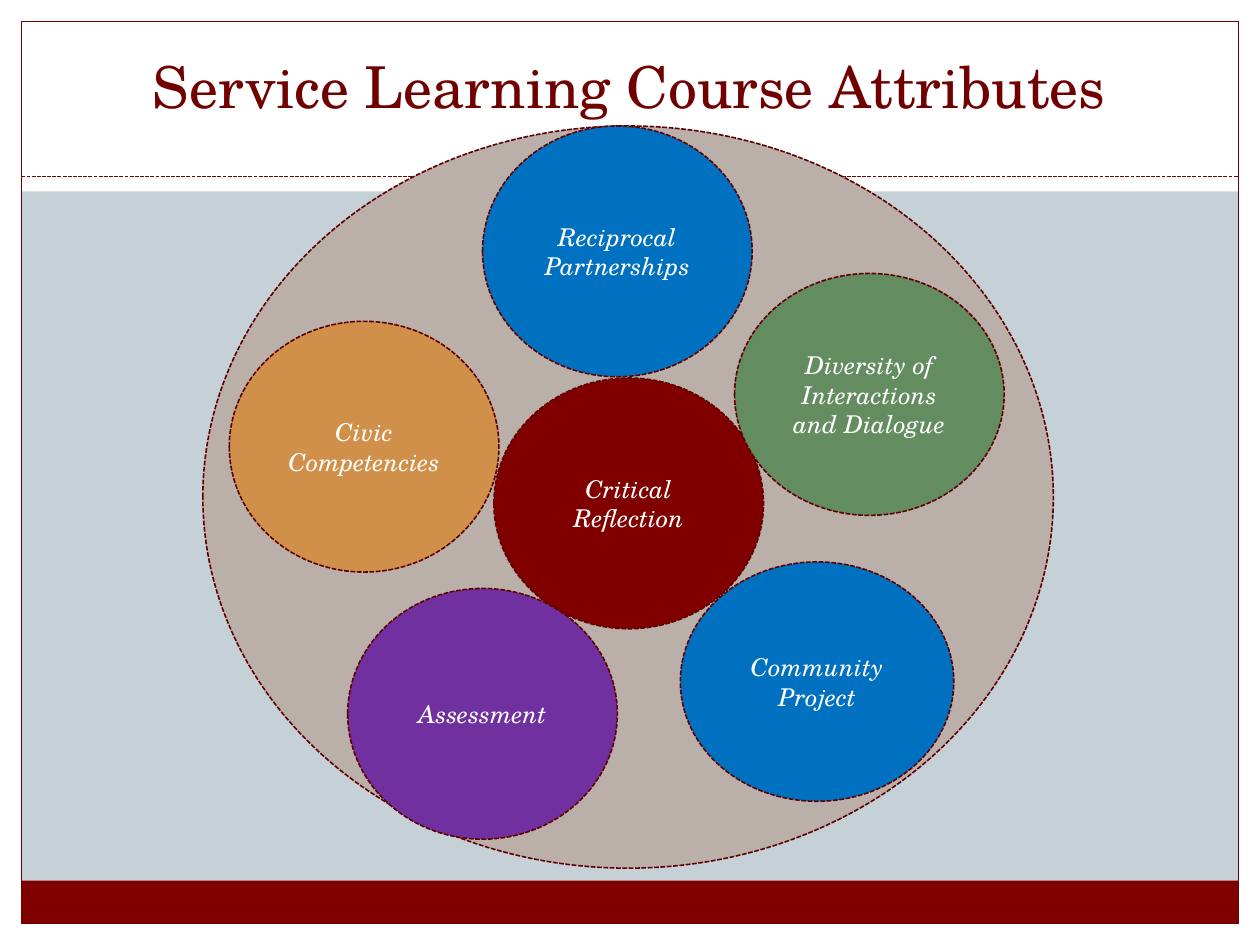
"""Build the slide on the attributes of a service learning course."""
from pptx import Presentation
from pptx.dml.color import RGBColor
from pptx.enum.dml import MSO_LINE
from pptx.enum.shapes import MSO_CONNECTOR, MSO_SHAPE
from pptx.enum.text import MSO_ANCHOR, PP_ALIGN
from pptx.oxml.ns import qn
from pptx.util import Inches, Pt

RECT, OVAL = MSO_SHAPE.RECTANGLE, MSO_SHAPE.OVAL
DASH, STRAIGHT = MSO_LINE.SQUARE_DOT, MSO_CONNECTOR.STRAIGHT
MIDDLE, BOTTOM, CENTER = MSO_ANCHOR.MIDDLE, MSO_ANCHOR.BOTTOM, PP_ALIGN.CENTER
FONT = "TeX Gyre Schola"
WHITE, MAROON, FRAME, RIM = "FFFFFF", "800000", "710000", "5F0000"
W, H, M = 10, 7.5, 0.17

TITLE = "Service Learning Course Attributes"
BANDS = [
    ((0, H - M, W, M), WHITE),
    ((0, 0, W, 1.52), WHITE),
    ((0, 0, M, H), WHITE),
    ((W - M, 0, M, H), WHITE),
    ((M, 6.99, W - 2 * M, 0.34), MAROON),
]
CIRCLES = [
    ("", (1.61, 1, 6.75, 5.89), "BAB0A9"),
    ("Civic Competencies", (1.82, 2.55, 2.14, 1.99), "D19049"),
    ("Reciprocal Partnerships", (3.83, 1, 2.14, 1.99), "0070C0"),
    ("Critical Reflection", (3.92, 3, 2.14, 1.99), MAROON),
    ("Assessment", (2.76, 4.67, 2.14, 1.99), "7030A0"),
    ("Community Project", (5.4, 4.46, 2.17, 1.9), "0070C0"),
    ("Diversity of Interactions and Dialogue", (5.83, 2.17, 2.14, 1.92), "648C61"),
]


def rgb(color):
    return RGBColor.from_string(color)


def set_line(line, color, width, dash=None):
    line.color.rgb = rgb(color)
    line.width = Pt(width)
    if dash:
        line.dash_style = dash


def add_shape(s, kind, box, fill=None):
    sp = s.shapes.add_shape(kind, *map(Inches, box))
    sp.shadow.inherit = False
    if fill:
        sp.fill.solid()
        sp.fill.fore_color.rgb = rgb(fill)
    else:
        sp.fill.background()
    sp.line.fill.background()
    return sp


def write(sp, text, size, color, anchor, italic=False):
    tf = sp.text_frame
    tf.word_wrap = True
    tf.vertical_anchor = anchor
    p = tf.paragraphs[0]
    p.alignment = CENTER
    r = p.add_run()
    r.text = text
    r.font.name, r.font.size, r.font.italic = FONT, Pt(size), italic
    r.font.color.rgb = rgb(color)


def add_frame(s):
    for box, fill in BANDS:
        add_shape(s, RECT, box, fill)
    border = add_shape(s, RECT, (M, M, W - 2 * M, H - 2 * M))
    set_line(border.line, FRAME, 0.75)
    rule = s.shapes.add_connector(STRAIGHT, *map(Inches, (M, 1.4, W - M, 1.4)))
    set_line(rule.line, FRAME, 0.75, DASH)
    sp_pr = rule.element.spPr
    sp_pr.append(sp_pr.makeelement(qn("a:effectLst"), {}))


def add_title(s):
    sp = s.shapes.title
    sp.element.getparent().append(sp.element)
    sp.left, sp.top, sp.width, sp.height = map(Inches, (0.33, 0.25, 9.33, 0.75))
    write(sp, TITLE, 33, FRAME, BOTTOM)


def add_circles(s):
    for text, box, fill in CIRCLES:
        sp = add_shape(s, OVAL, box, fill)
        set_line(sp.line, RIM, 0.9, DASH)
        if text:
            write(sp, text, 14, WHITE, MIDDLE, italic=True)


def main():
    prs = Presentation()
    prs.slide_width, prs.slide_height = Inches(W), Inches(H)
    s = prs.slides.add_slide(prs.slide_layouts[5])
    s.background.fill.solid()
    s.background.fill.fore_color.rgb = rgb("C5D1D7")
    add_frame(s)
    add_title(s)
    add_circles(s)
    prs.save("out.pptx")


if __name__ == "__main__":
    main()
